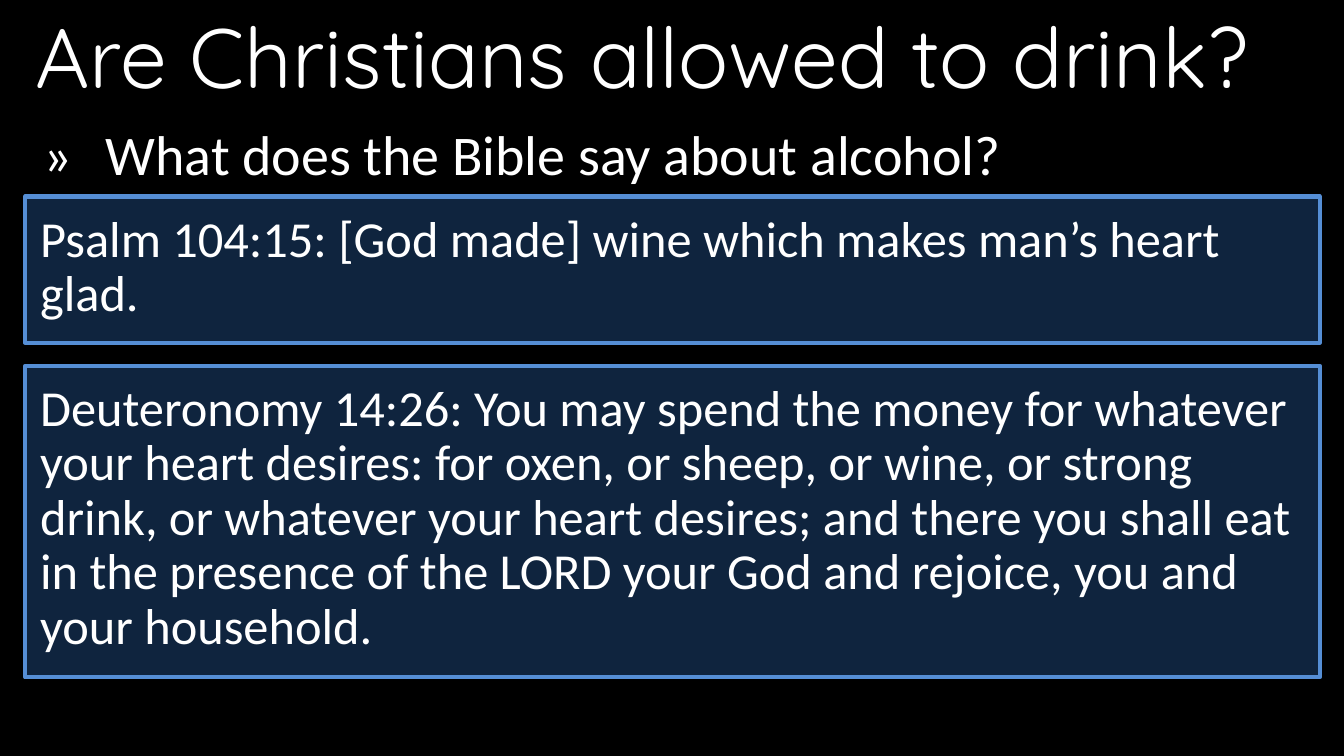
from pptx import Presentation
from pptx.dml.color import RGBColor
from pptx.enum.shapes import MSO_SHAPE
from pptx.enum.text import MSO_AUTO_SIZE
from pptx.util import Inches, Pt

RECTANGLE = MSO_SHAPE.RECTANGLE
FIT_SHAPE = MSO_AUTO_SIZE.SHAPE_TO_FIT_TEXT
BLACK = RGBColor(0x00, 0x00, 0x00)
WHITE = RGBColor(0xFF, 0xFF, 0xFF)
NAVY = RGBColor(0x0F, 0x24, 0x3E)
BLUE = RGBColor(0x55, 0x8E, 0xD5)

VERSES = [
    (1.95, 1.45, "Psalm 104:15: [God made] wine which makes man’s heart glad."),
    (3.63, 3.09,
     "Deuteronomy 14:26: You may spend the money for whatever your heart desires: "
     "for oxen, or sheep, or wine, or strong drink, or whatever your heart desires; "
     "and there you shall eat in the presence of the LORD your God and rejoice, "
     "you and your household."),
]


def add_text(s, text, left, top, width, height, size, font="Calibri",
             line_spacing=None, after=0, hanging=0):
    sp = s.shapes.add_textbox(Inches(left), Inches(top), Inches(width), Inches(height))
    tf = sp.text_frame
    tf.word_wrap = True
    tf.auto_size = FIT_SHAPE
    p = tf.paragraphs[0]
    p.line_spacing = line_spacing
    p.space_after = Pt(after)
    if hanging:
        pPr = p._p.get_or_add_pPr()
        pPr.set("marL", str(Inches(hanging)))
        pPr.set("indent", str(-Inches(hanging)))
    r = p.add_run()
    r.text = text
    r.font.size = Pt(size)
    r.font.name = font
    r.font.color.rgb = WHITE


def add_verse(s, top, height, text):
    sp = s.shapes.add_shape(RECTANGLE, Inches(0.25), Inches(top),
                            Inches(12.84), Inches(height))
    sp.shadow.inherit = False
    sp.fill.solid()
    sp.fill.fore_color.rgb = NAVY
    sp.line.color.rgb = BLUE
    sp.line.width = Pt(3)
    add_text(s, text, 0.3, top + 0.12, 12.76, height - 0.26, 36,
             line_spacing=0.9, after=3)


def main():
    prs = Presentation()
    prs.slide_width = Inches(13.33)
    prs.slide_height = Inches(7.5)
    s = prs.slides.add_slide(prs.slide_layouts[6])
    s.background.fill.solid()
    s.background.fill.fore_color.rgb = BLACK
    add_text(s, "»\tWhat does the Bible say about alcohol?", 0.33, 1.21, 12.42, 0.71,
             40, line_spacing=0.9, after=6, hanging=0.62)
    add_text(s, "Are Christians allowed to drink?", 0.25, 0, 13.08, 1.11,
             60, font="Quicksand")
    for top, height, text in VERSES:
        add_verse(s, top, height, text)
    prs.save("out.pptx")


if __name__ == "__main__":
    main()
